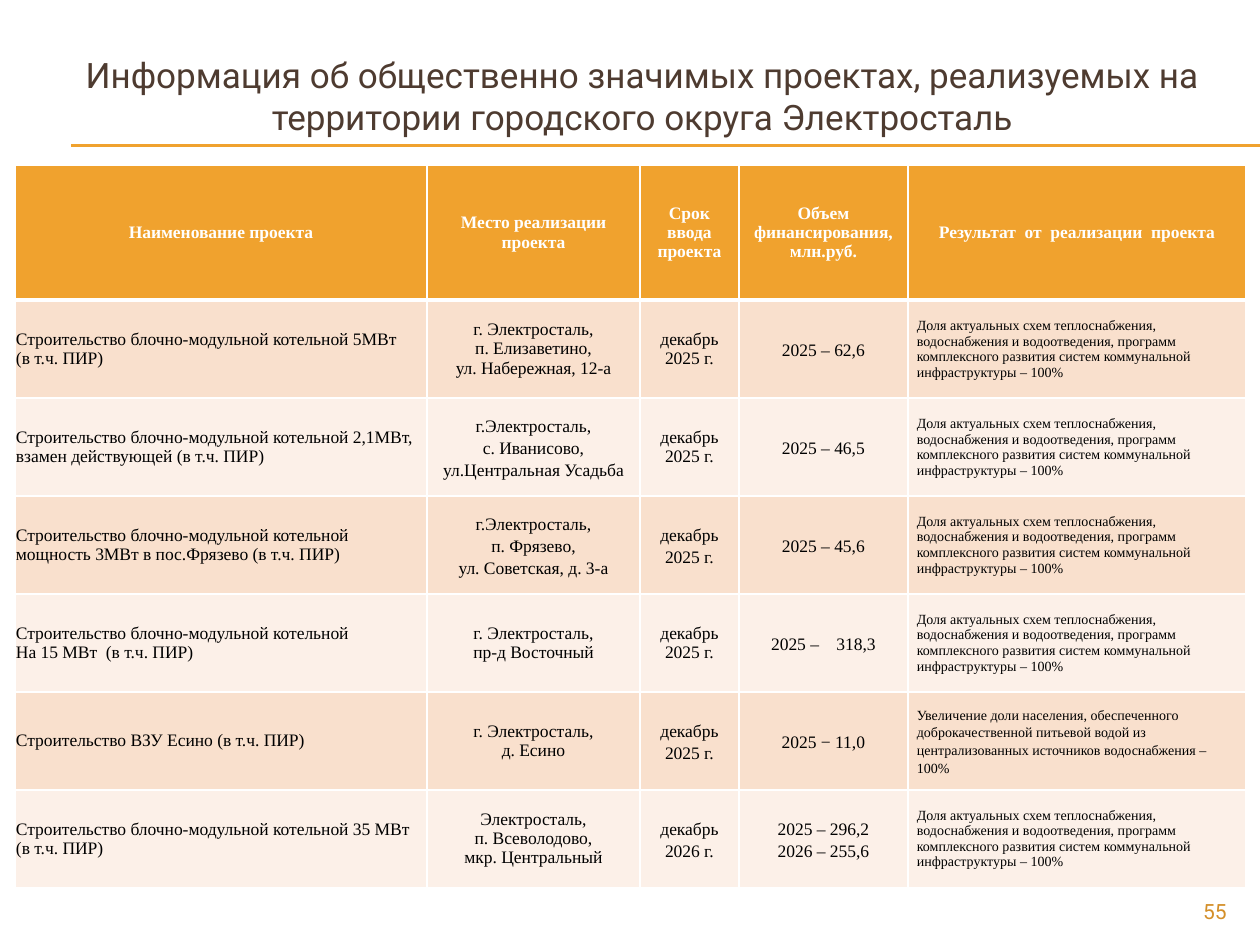
from lxml import etree
from pptx import Presentation
from pptx import util as u
from pptx.dml.color import RGBColor
from pptx.enum import shapes, text
from pptx.oxml.ns import qn

HEX = {"gold": "F0A22E", "brown": "4E3B30", "page": "D48F29", "white": "FFFFFF",
       "black": "000000", "peach": "F9E0CD", "cream": "FCF0E8"}
SERIF, SANS = "Times New Roman", "Roboto"
LEFT, MID, RIGHT = text.PP_ALIGN.LEFT, text.PP_ALIGN.CENTER, text.PP_ALIGN.RIGHT
COLS = [412, 213, 99, 169, 338]
ROWS = [135] + [98] * 6
SHARE = ("Доля актуальных схем теплоснабжения, водоснабжения и водоотведения, программ "
         "комплексного развития систем коммунальной инфраструктуры – 100%")
WATER = ("Увеличение доли населения, обеспеченного доброкачественной питьевой водой из "
         "централизованных источников водоснабжения – 100%")
HEAD = ["Наименование проекта", "Место реализации проекта", "Срок ввода проекта",
        "Объем финансирования,\nмлн.руб.", "Результат  от  реализации  проекта"]
BODY = [
    ["Строительство блочно-модульной котельной 5МВт\n(в т.ч. ПИР)",
     "г. Электросталь,\nп. Елизаветино,\nул. Набережная, 12-а",
     "декабрь 2025 г.", "2025 – 62,6", SHARE],
    ["Строительство блочно-модульной котельной 2,1МВт, взамен действующей (в т.ч. ПИР)",
     "г.Электросталь,\nс. Иванисово,\nул.Центральная Усадьба",
     "декабрь 2025 г.", "2025 – 46,5", SHARE],
    ["Строительство блочно-модульной котельной мощность 3МВт в пос.Фрязево (в т.ч. ПИР)",
     "г.Электросталь,\nп. Фрязево,\nул. Советская, д. 3-а",
     "декабрь\n2025 г.", "2025 – 45,6", SHARE],
    ["Строительство блочно-модульной котельной\nНа 15 МВт  (в т.ч. ПИР)",
     "г. Электросталь,\nпр-д Восточный",
     "декабрь 2025 г.", "2025 –    318,3", SHARE],
    ["Строительство ВЗУ Есино (в т.ч. ПИР)",
     "г. Электросталь,\nд. Есино",
     "декабрь 2025 г.", "2025 − 11,0", WATER],
    ["Строительство блочно-модульной котельной 35 МВт (в т.ч. ПИР)",
     "Электросталь,\nп. Всеволодово,\nмкр. Центральный",
     "декабрь 2026 г.", "2025 – 296,2\n2026 – 255,6", SHARE],
]
LOOSE = {(2, 1), (3, 1), (3, 2), (5, 2), (6, 2), (5, 4)} | {(row, 3) for row in range(1, 7)}


def px(num):
    """Turn px into EMU."""
    return u.Emu(round(num * 914400 / 126))


def rgb(name):
    """Look up a named colour."""
    return RGBColor.from_string(HEX[name])


def style(frame, size, font, tint, align, bold=False, gap=1.0):
    """Format every paragraph and run of a text frame."""
    for para in frame.paragraphs:
        para.alignment = align
        para.line_spacing = gap
        for run in para.runs:
            run.font.size = u.Pt(size)
            run.font.name = font
            run.font.bold = bold
            run.font.color.rgb = rgb(tint)


def edge(cell, row):
    """Draw white borders, thick between head and body."""
    wide = {"lnT": 3 if row == 1 else 1, "lnB": 3 if row == 0 else 1}
    props = cell._tc.get_or_add_tcPr()
    for spot, tag in enumerate(("lnL", "lnR", "lnT", "lnB")):
        line = etree.Element(qn("a:" + tag), w=str(u.Pt(wide.get(tag, 1))))
        fill = etree.SubElement(line, qn("a:solidFill"))
        etree.SubElement(fill, qn("a:srgbClr"), val=HEX["white"])
        props.insert(spot, line)


def title(slide, box):
    """Fill and place the title placeholder."""
    head = slide.shapes.title
    head.left, head.top, head.width, head.height = map(px, box)
    frame = head.text_frame
    frame.text = ("Информация об общественно значимых проектах, реализуемых на "
                  "территории городского округа Электросталь")
    frame.auto_size = text.MSO_AUTO_SIZE.NONE
    frame.vertical_anchor = text.MSO_ANCHOR.MIDDLE
    style(frame, 20, SANS, "brown", MID)


def rule(slide, box):
    """Draw the double gold rule on the top and bottom of its box."""
    left, top, width, height = box
    for y in (top, top + height):
        line = slide.shapes.add_connector(
            shapes.MSO_CONNECTOR.STRAIGHT, px(left), px(y), px(left + width), px(y))
        line.line.color.rgb = rgb("gold")
        line.line.width = u.Pt(0.75)
        etree.SubElement(line._element.spPr, qn("a:effectLst"))


def fill(cell, row, col, words):
    """Write and format one table cell."""
    cell.text_frame.text = words
    cell.vertical_anchor = text.MSO_ANCHOR.MIDDLE
    cell.fill.solid()
    if row == 0:
        cell.fill.fore_color.rgb = rgb("gold")
        style(cell.text_frame, 10, SERIF, "white", MID, bold=True)
    else:
        cell.fill.fore_color.rgb = rgb("peach" if row % 2 else "cream")
        cell.margin_left = cell.margin_right = px(9 if col else 1)
        cell.margin_top = cell.margin_bottom = 0
        style(cell.text_frame, 8 if col == 4 else 10, SERIF, "black",
              LEFT if col in (0, 4) else MID, gap=1.15 if (row, col) in LOOSE else 1.0)
    edge(cell, row)


def grid(slide, box):
    """Build the table of projects."""
    table = slide.shapes.add_table(len(ROWS), len(COLS), *map(px, box)).table
    for col, width in enumerate(COLS):
        table.columns[col].width = px(width)
    for row, words in enumerate([HEAD] + BODY):
        table.rows[row].height = px(ROWS[row])
        for col, word in enumerate(words):
            fill(table.cell(row, col), row, col, word)


def page(slide, box):
    """Write the page number."""
    frame = slide.shapes.add_textbox(*map(px, box)).text_frame
    frame.word_wrap = True
    frame.text = "55"
    style(frame, 12, SANS, "page", RIGHT)


def main():
    """Build and save the slide."""
    deck = Presentation()
    deck.slide_width, deck.slide_height = px(1260), px(945)
    slide = deck.slides.add_slide(deck.slide_layouts[5])
    rule(slide, (71, 145, 1189, 1))
    title(slide, (44, 37, 1197, 116))
    grid(slide, (15, 165, sum(COLS), sum(ROWS)))
    page(slide, (1134, 892, 105, 34))
    deck.save("out.pptx")


if __name__ == "__main__":
    main()
